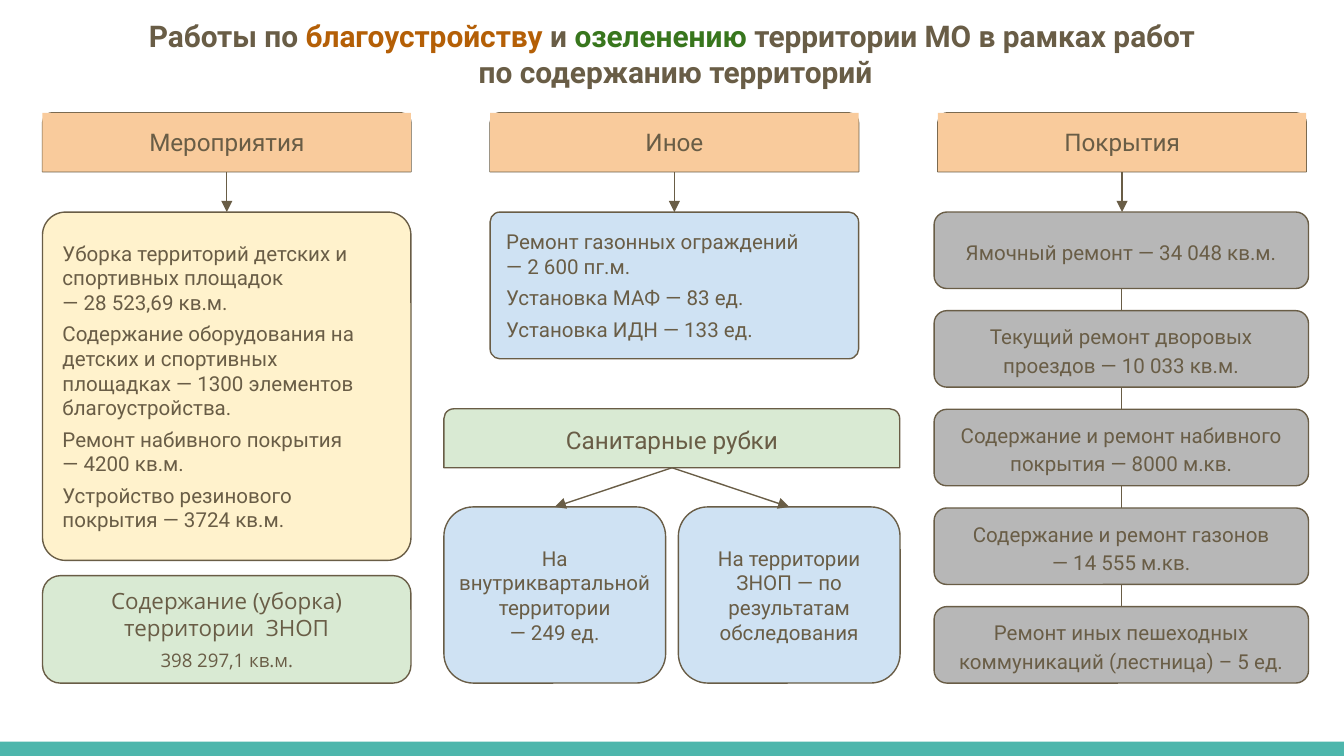
"""Build the slide on landscaping and upkeep works."""
from lxml import etree
from pptx import Presentation
from pptx.dml.color import RGBColor
from pptx.enum.shapes import MSO_CONNECTOR, MSO_SHAPE
from pptx.enum.text import MSO_ANCHOR, PP_ALIGN
from pptx.oxml.ns import qn
from pptx.util import Pt

RECT = MSO_SHAPE.RECTANGLE
ROUND = MSO_SHAPE.ROUNDED_RECTANGLE
TAB = MSO_SHAPE.ROUND_2_SAME_RECTANGLE
LINE = MSO_CONNECTOR.STRAIGHT
MID = MSO_ANCHOR.MIDDLE
LEFT, MIDDLE = PP_ALIGN.LEFT, PP_ALIGN.CENTER
BROWN, WHITE, TEAL = "695D46", "FFFFFF", "4DB6AC"
PEACH, CREAM, BLUE, GREEN, GREY = "F9CB9C", "FFF2CC", "CFE2F3", "D9EAD3", "B7B7B7"
hue = RGBColor.from_string

deck = Presentation()
deck.slide_width, deck.slide_height = Pt(720), Pt(405)
slide = deck.slides.add_slide(deck.slide_layouts[6])


def box(kind, area, fill, lines=(), edge=True, curve=0.167, pad=7.2, gap=0,
        align=MIDDLE, space=1.0, size=11, face="Roboto"):
    """Add a filled shape; a line that opens with a dash joins the one above."""
    shape = slide.shapes.add_shape(kind, *map(Pt, area))
    shape.shadow.inherit = False
    shape.fill.solid()
    shape.fill.fore_color.rgb = hue(fill)
    if edge:
        shape.line.color.rgb = hue(BROWN)
        shape.line.width = Pt(0.75)
        shape.adjustments[0] = curve
    else:
        shape.line.fill.background()
    frame = shape.text_frame
    form = {"word_wrap": True, "vertical_anchor": MID,
            "margin_left": Pt(pad), "margin_right": Pt(pad),
            "margin_top": Pt(7.2), "margin_bottom": Pt(7.2)}
    for key, value in form.items():
        setattr(frame, key, value)
    for row, text in enumerate(lines):
        para = frame.paragraphs[0] if row == 0 else frame.add_paragraph()
        para.alignment, para.line_spacing = align, space
        if row and not text.startswith("—"):
            para.space_before = Pt(gap)
        run = para.add_run()
        run.text = text
        run.font.color.rgb = hue(BROWN)
        for key, value in {"size": Pt(size), "name": face}.items():
            setattr(run.font, key, value)
    return frame


def link(start, end, arrow=True):
    """Add a thin line, with an arrowhead at its end if wanted."""
    wire = slide.shapes.add_connector(LINE, *map(Pt, (*start, *end)))
    wire.line.color.rgb = hue(BROWN)
    wire.line.width = Pt(0.75)
    props = wire._element.spPr
    if arrow:
        etree.SubElement(props.find(qn("a:ln")), qn("a:tailEnd"), type="triangle")
    etree.SubElement(props, qn("a:effectLst"))


box(RECT, (0, 397.4, 720, 7.6), TEAL, edge=False)

title = box(RECT, (0, 0, 720, 57.6), WHITE, edge=False)
words = [
    [("Работы по ", BROWN), ("благоустройству", "B45F06"), (" и ", BROWN),
     ("озеленению", "38761D"), (" территории МО в рамках работ", BROWN)],
    [(" по содержанию территорий", BROWN)],
]
for row, parts in enumerate(words):
    para = title.paragraphs[0] if row == 0 else title.add_paragraph()
    para.alignment = MIDDLE
    for text, tint in parts:
        run = para.add_run()
        run.text = text
        run.font.color.rgb = hue(tint)
        for key, value in {"size": Pt(16), "name": "Roboto", "bold": True}.items():
            setattr(run.font, key, value)

wide, top = 197.4, 113.6
cols = [22.8 + 239.8 * col for col in range(3)]
for left, name in zip(cols, ("Мероприятия", "Иное", "Покрытия")):
    head = (left, 60.4, wide, 31.6)
    box(TAB, head, PEACH)
    box(RECT, head, PEACH, [name], edge=False, size=13)
    link((left + wide / 2, 92.4), (left + wide / 2, top))

tasks = [
    "Уборка территорий детских и спортивных площадок",
    "— 28 523,69 кв.м.",
    "Содержание оборудования на детских и спортивных площадках — 1300 элементов благоустройства.",
    "Ремонт набивного покрытия",
    "— 4200 кв.м.",
    "Устройство резинового покрытия — 3724 кв.м.",
]
other = [
    "Ремонт газонных ограждений",
    "— 2 600 пг.м.",
    "Установка МАФ — 83 ед.",
    "Установка ИДН — 133 ед.",
]
plain = {"curve": 0.066, "align": LEFT, "gap": 3.6}
box(ROUND, (cols[0], top, wide, 186.6), CREAM, tasks, **plain)
box(ROUND, (cols[1], top, wide, 78.6), BLUE, other, **plain)

park = box(ROUND, (cols[0], 308.4, wide, 57.6), GREEN,
           ["Содержание (уборка) территории  ЗНОП", "398 297,1 кв.м."],
           gap=4, size=12, face="Open Sans")
park.paragraphs[1].runs[0].font.size = Pt(10)

box(TAB, (237.8, 219, 244.2, 31.6), GREEN, ["Санитарные рубки"], size=13)
cuts = [
    ["На внутриквартальной территории", "— 249 ед."],
    ["На территории ЗНОП — по результатам обследования"],
]
for col, lines in enumerate(cuts):
    left = 237.8 + 125.6 * col
    box(ROUND, (left, 271.6, 118.8, 94.4), BLUE, lines, pad=2)
    link((360, 250.6), (left + 59.4, 271.6))

works = [
    ["Ямочный ремонт — 34 048 кв.м."],
    ["Текущий ремонт дворовых проездов — 10 033 кв.м."],
    ["Содержание и ремонт набивного покрытия — 8000 м.кв."],
    ["Содержание и ремонт газонов", "— 14 555 м.кв."],
    ["Ремонт иных пешеходных коммуникаций (лестница) – 5 ед."],
]
tall, step = 41, 52.85
for row, lines in enumerate(works):
    high = top + step * row
    box(ROUND, (500.4, high, 200.6, tall), GREY, lines, space=1.15)
    if row:
        link((600.7, high - step + tall), (600.7, high), arrow=False)

deck.save("out.pptx")
